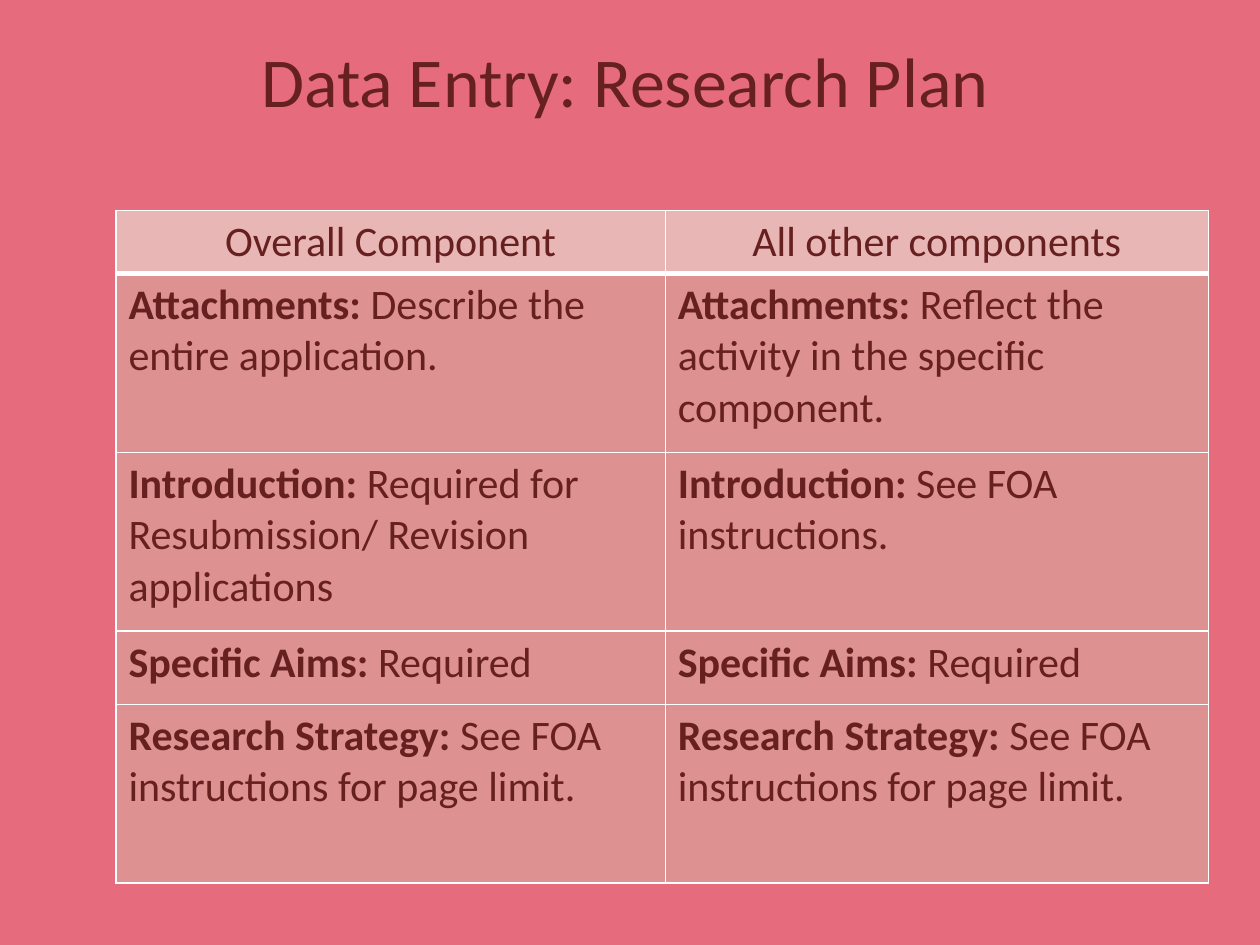
from lxml import etree
from pptx import Presentation
from pptx.dml.color import RGBColor
from pptx.enum.text import MSO_ANCHOR, PP_ALIGN
from pptx.oxml.ns import qn
from pptx.util import Inches, Pt

LEFT, CENTER = PP_ALIGN.LEFT, PP_ALIGN.CENTER
TOP = MSO_ANCHOR.TOP

# Content: each cell is a bold lead and its plain text
TITLE = "Data Entry: Research Plan"
ROWS = [
    (("", "Overall Component"), ("", "All other components")),
    (("Attachments:", " Describe the entire application."),
     ("Attachments:", " Reflect the activity in the specific component.")),
    (("Introduction:", " Required for Resubmission/ Revision applications"),
     ("Introduction: ", "See FOA instructions.")),
    (("Specific Aims:", " Required"), ("Specific Aims:", " Required")),
    (("Research Strategy: ", "See FOA instructions for page limit."),
     ("Research Strategy: ", "See FOA instructions for page limit.")),
]
WIDTHS = [4.36, 4.31]
HEIGHTS = [0.5, 1.42, 1.42, 0.58, 1.42]
BACK, INK, HEAD, BODY, RULE = "E66C7D", "672020", "E8B6B5", "DD9191", "FFFFFF"


def color(code):
    return RGBColor.from_string(code)


def write(frame, text, lead="", size=24, align=LEFT):
    frame.word_wrap = True
    para = frame.paragraphs[0]
    para.alignment = align
    for part, bold in ((lead, True), (text, False)):
        if part:
            run = para.add_run()
            run.text = part
            font = run.font
            font.name, font.size, font.bold = "Calibri", Pt(size), bold
            font.color.rgb = color(INK)


def border(cell, base):
    props = cell._tc.get_or_add_tcPr()
    for side, width in (("L", 1), ("R", 1), ("T", 1), ("B", base)):
        line = etree.SubElement(props, qn("a:ln" + side), w=str(Pt(width)))
        fill = etree.SubElement(line, qn("a:solidFill"))
        etree.SubElement(fill, qn("a:srgbClr"), val=RULE)


def main():
    prs = Presentation()
    prs.slide_width, prs.slide_height = Inches(10), Inches(7.5)
    slide = prs.slides.add_slide(prs.slide_layouts[6])
    slide.background.fill.solid()
    slide.background.fill.fore_color.rgb = color(BACK)

    # Title
    box = slide.shapes.add_textbox(
        Inches(0.92), Inches(0.25), Inches(8.08), Inches(0.77))
    write(box.text_frame, TITLE, size=40, align=CENTER)

    # Table
    table = slide.shapes.add_table(
        len(ROWS), len(WIDTHS), Inches(0.92), Inches(1.67),
        Inches(sum(WIDTHS)), Inches(sum(HEIGHTS))).table
    table.horz_banding = False
    for col, width in zip(table.columns, WIDTHS):
        col.width = Inches(width)
    for r, (row, height) in enumerate(zip(ROWS, HEIGHTS)):
        table.rows[r].height = Inches(height)
        top = r == 0
        for c, (lead, text) in enumerate(row):
            cell = table.cell(r, c)
            cell.vertical_anchor = TOP
            border(cell, 3 if top else 1)
            cell.fill.solid()
            cell.fill.fore_color.rgb = color(HEAD if top else BODY)
            write(cell.text_frame, text, lead=lead,
                  align=CENTER if top else LEFT)

    prs.save("out.pptx")


if __name__ == "__main__":
    main()
